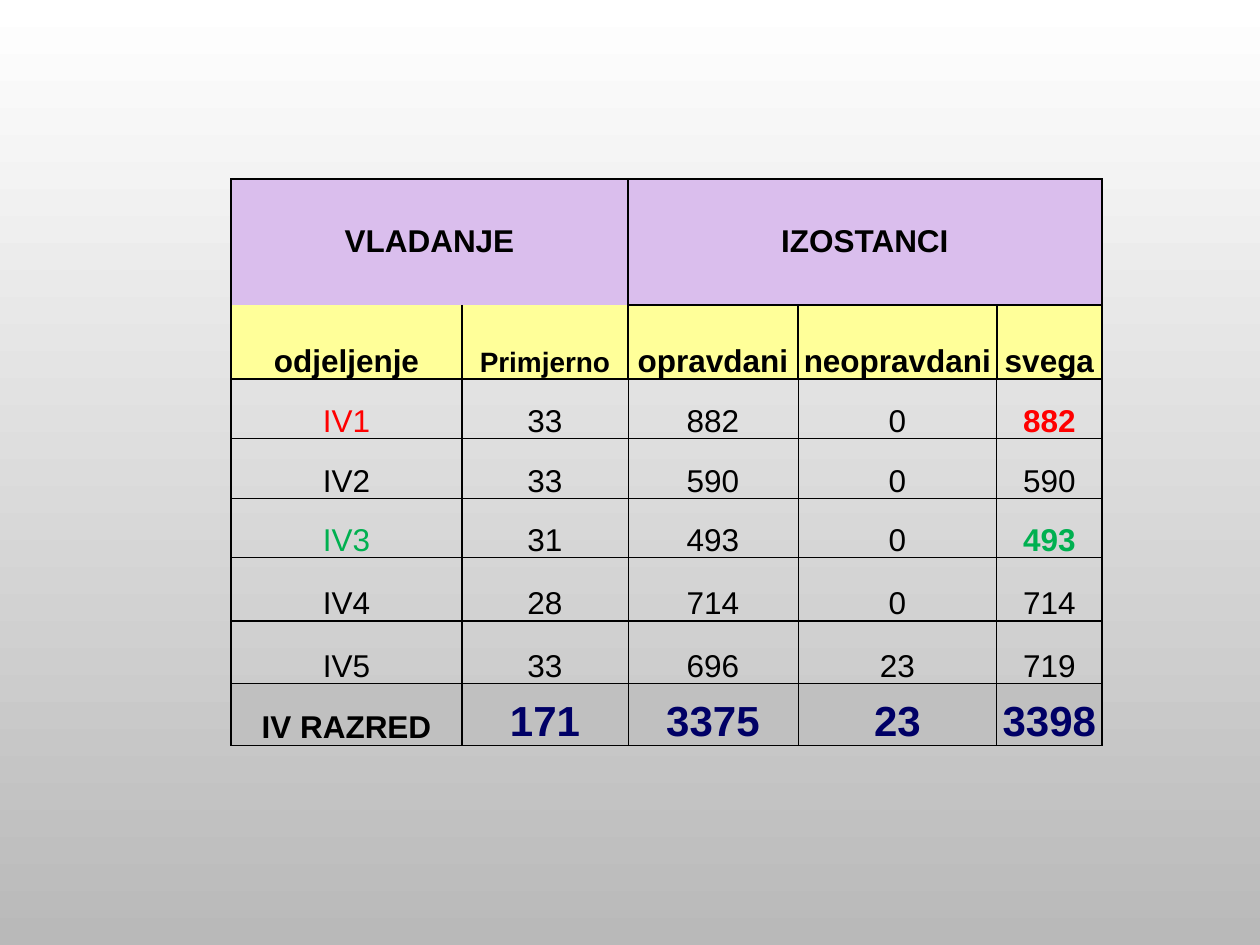
from pptx import Presentation
from pptx.dml.color import RGBColor
from pptx.enum.text import MSO_ANCHOR, PP_ALIGN
from pptx.oxml.ns import qn
from pptx.util import Emu, Pt
from lxml.etree import SubElement

PX = 914400 // 126
COLORS = {
    "black": "000000", "red": "FF0000", "green": "00B050", "navy": "000066",
    "lilac": "DABEED", "yellow": "FFFF99", "silver": "C0C0C0",
    "top": "FFFFFF", "bottom": "B9B9B9",
}


def color(name):
    return RGBColor.from_string(COLORS[name])


def add_border(cell, side, width):
    line = SubElement(cell._tc.get_or_add_tcPr(), qn("a:ln" + side), w=str(Pt(width)))
    if width:
        fill = SubElement(line, qn("a:solidFill"))
        SubElement(fill, qn("a:srgbClr"), val=COLORS["black"])
    else:
        SubElement(line, qn("a:noFill"))


deck = Presentation()
deck.slide_width, deck.slide_height = Emu(9144000), Emu(6858000)
slide = deck.slides.add_slide(deck.slide_layouts[6])

# Background gradient, light at the top
background = slide.background.fill
background.gradient()
background.gradient_angle = 270
for stop, name in zip(background.gradient_stops, ("top", "bottom")):
    stop.color.rgb = color(name)

# Conduct and absences by class
rows = [
    ["VLADANJE", "", "IZOSTANCI", "", ""],
    ["odjeljenje", "Primjerno", "opravdani", "neopravdani", "svega"],
    ["IV1", "33", "882", "0", "882"],
    ["IV2", "33", "590", "0", "590"],
    ["IV3", "31", "493", "0", "493"],
    ["IV4", "28", "714", "0", "714"],
    ["IV5", "33", "696", "23", "719"],
    ["IV RAZRED", "171", "3375", "23", "3398"],
]
widths = [231, 166, 170, 199, 105]
heights = [126, 74, 60, 60, 59, 63, 63, 62]
row_fills = {0: "lilac", 1: "yellow", 7: "silver"}
highlights = {2: "red", 4: "green"}
total = len(rows) - 1

frame = slide.shapes.add_table(len(rows), len(widths), 231 * PX, 179 * PX,
                               sum(widths) * PX, sum(heights) * PX)
table = frame.table
table.first_row = table.horz_banding = False
for column, width in zip(table.columns, widths):
    column.width = width * PX
for row, height in zip(table.rows, heights):
    row.height = height * PX
table.cell(0, 0).merge(table.cell(0, 1))
table.cell(0, 2).merge(table.cell(0, 4))

for r, values in enumerate(rows):
    for c, value in enumerate(values):
        cell = table.cell(r, c)
        cell.margin_left = cell.margin_right = cell.margin_top = cell.margin_bottom = 0
        cell.vertical_anchor = MSO_ANCHOR.BOTTOM

        # Thin lines inside the body, none under the left heading
        body = r >= 2
        add_border(cell, "L", 0.5 if body and c >= 2 else 1)
        add_border(cell, "R", 0.5 if body and 1 <= c <= 3 else 1)
        add_border(cell, "T", 0 if r == 1 and c < 2 else 0.5 if 3 <= r <= 5 else 1)
        add_border(cell, "B", 0 if r == 0 and c < 2 else 0.5 if 2 <= r <= 4 else 1)

        if r in row_fills:
            cell.fill.solid()
            cell.fill.fore_color.rgb = color(row_fills[r])
        else:
            cell.fill.background()
        if not value:
            continue

        marked = r in highlights and c in (0, 4)
        sum_cell = r == total and c > 0
        para = cell.text_frame.paragraphs[0]
        para.alignment = PP_ALIGN.CENTER
        span = para.add_run()
        span.text = value
        span.font.name = "Arial"
        span.font.size = Pt(24 if sum_cell else 16 if value == "Primjerno" else 18)
        span.font.bold = r in row_fills or (marked and c == 4)
        span.font.color.rgb = color(
            "navy" if sum_cell else highlights[r] if marked else "black")

# The two headings sit at mid-height
table.cell(0, 0).margin_bottom = 46 * PX
table.cell(0, 2).vertical_anchor = MSO_ANCHOR.MIDDLE

deck.save("out.pptx")
